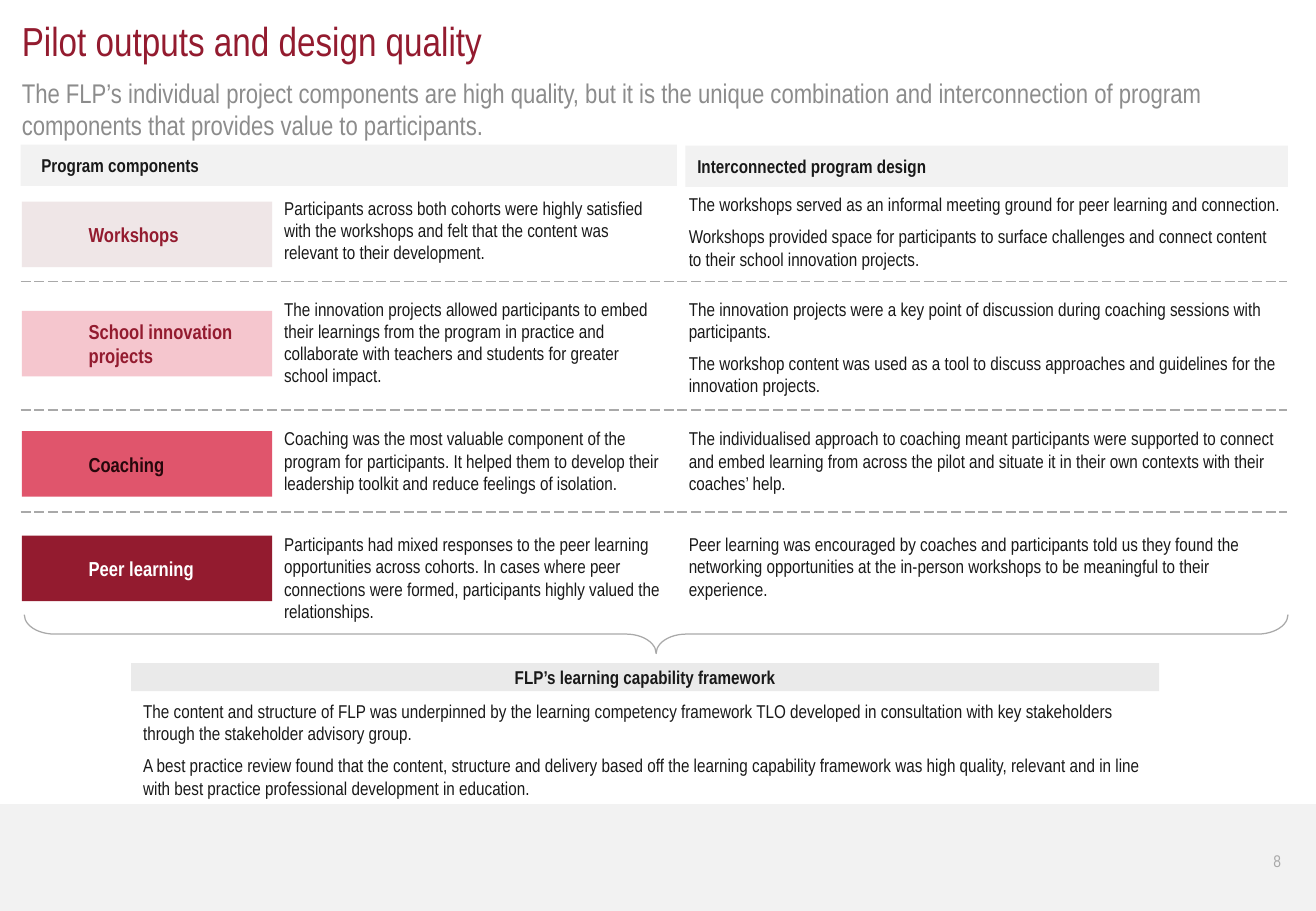
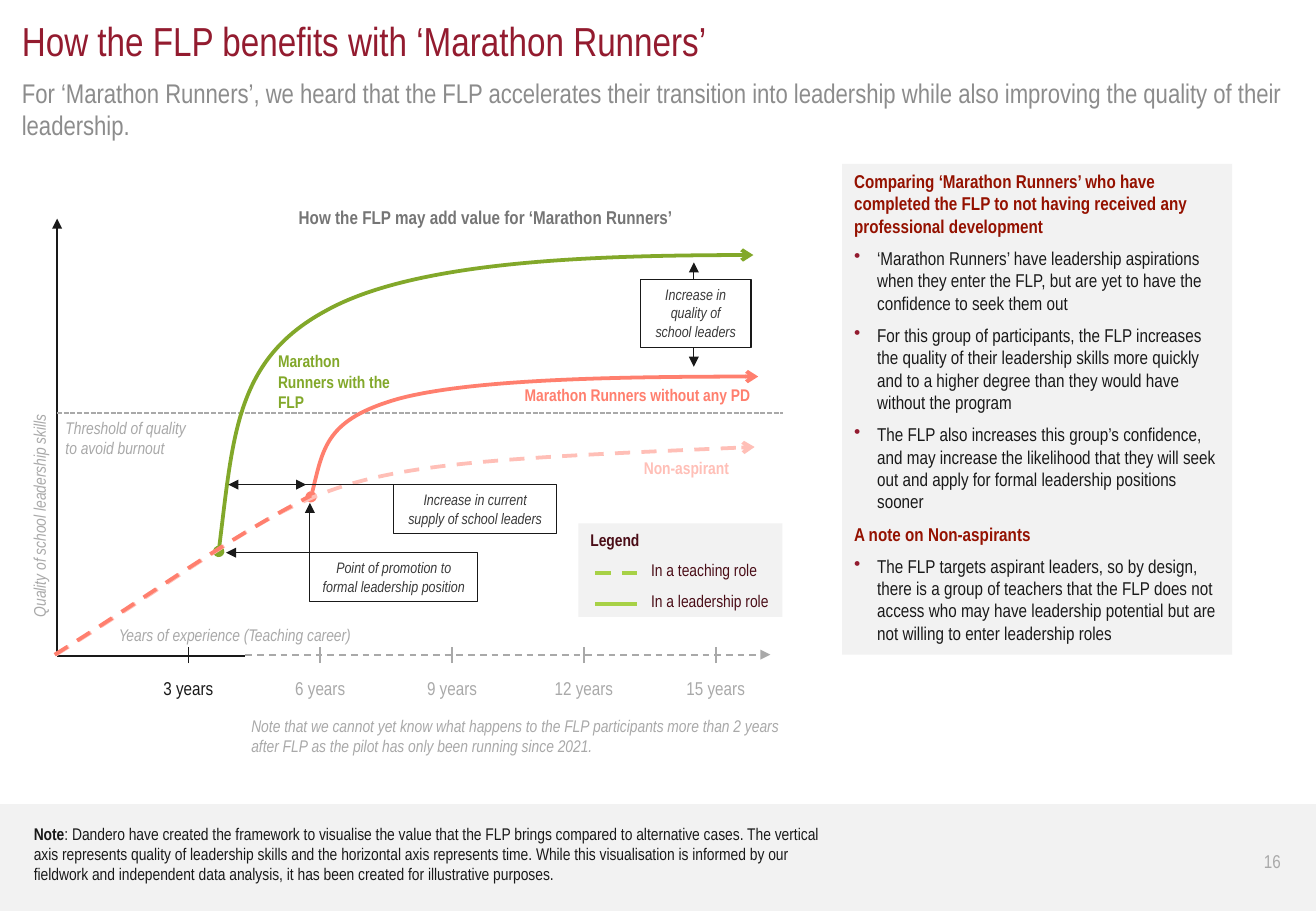
from lxml import etree
from pptx import Presentation
from pptx import util as u
from pptx.dml.color import RGBColor
from pptx.enum import dml, shapes, text
from pptx.oxml.ns import qn

CELL = u.Inches(0.1)  # grid unit: every length below is counted in cells
WIDE, HIGH = 108.3, 75
LEFT = 1.8
FACE = "Arial Narrow"

WINE = RGBColor(0x93, 0x1B, 0x2F)
GREY = RGBColor(0x8C, 0x8C, 0x8C)
MID = RGBColor(0x75, 0x75, 0x75)
PALE = RGBColor(0xA9, 0xA9, 0xA9)
BAND = RGBColor(0xF2, 0xF2, 0xF2)
BAR = RGBColor(0xEA, 0xEA, 0xEA)
INK = RGBColor(0x19, 0x19, 0x19)
SOFT = RGBColor(0x3A, 0x3A, 0x3A)
WHITE = RGBColor(0xFF, 0xFF, 0xFF)
MIST = RGBColor(0xEF, 0xE6, 0xE7)
PINK = RGBColor(0xF5, 0xC6, 0xCE)
ROSE = RGBColor(0xE0, 0x55, 0x6C)
DARK = RGBColor(0x26, 0x07, 0x0B)
PLUM = RGBColor(0x4A, 0x0D, 0x17)
BRICK = RGBColor(0x94, 0x11, 0x00)
GREEN = RGBColor(0x82, 0xA8, 0x2A)
LIME = RGBColor(0xA7, 0xD1, 0x46)
CORAL = RGBColor(0xFF, 0x7F, 0x6E)
BLUSH = RGBColor(0xFF, 0xBF, 0xB7)

DASH = dml.MSO_LINE.DASH
LONG = dml.MSO_LINE.LONG_DASH
SHORT = dml.MSO_LINE.SQUARE_DOT
TOP, MIDDLE = text.MSO_ANCHOR.TOP, text.MSO_ANCHOR.MIDDLE
START, CENTER, END = text.PP_ALIGN.LEFT, text.PP_ALIGN.CENTER, text.PP_ALIGN.RIGHT
FIT, FIXED = text.MSO_AUTO_SIZE.SHAPE_TO_FIT_TEXT, text.MSO_AUTO_SIZE.NONE

# tag, fill, ink, tag top, (text top, text), (design top, design paragraphs)
PARTS = [
    ("Workshops", MIST, WINE, 16.6,
     (15.7, "Participants across both cohorts were highly satisfied with the workshops and felt that the content was relevant to their development."),
     (15.4, ["The workshops served as an informal meeting ground for peer learning and connection.",
             "Workshops provided space for participants to surface challenges and connect content to their school innovation projects."])),
    ("School innovation projects", PINK, WINE, 25.6,
     (24, "The innovation projects allowed participants to embed their learnings from the program in practice and collaborate with teachers and students for greater school impact."),
     (24, ["The innovation projects were a key point of discussion during coaching sessions with participants.",
           "The workshop content was used as a tool to discuss approaches and guidelines for the innovation projects."])),
    ("Coaching", ROSE, DARK, 35.5,
     (34.7, "Coaching was the most valuable component of the program for participants. It helped them to develop their leadership toolkit and reduce feelings of isolation."),
     (34.7, ["The individualised approach to coaching meant participants were supported to connect and embed learning from across the pilot and situate it in their own contexts with their coaches’ help."])),
    ("Peer learning", WINE, WHITE, 44.1,
     (43.4, "Participants had mixed responses to the peer learning opportunities across cohorts. In cases where peer connections were formed, participants highly valued the relationships."),
     (43.4, ["Peer learning was encouraged by coaches and participants told us they found the networking opportunities at the in-person workshops to be meaningful to their experience."])),
]

FRAMEWORK = [
    "The content and structure of FLP was underpinned by the learning competency framework TLO developed in consultation with key stakeholders through the stakeholder advisory group.",
    "A best practice review found that the content, structure and delivery based off the learning capability framework was high quality, relevant and in line with best practice professional development in education.",
]

# heading, bullets
PANEL = [
    ("Comparing ‘Marathon Runners’ who have completed the FLP to not having received any professional development",
     ["‘Marathon Runners’ have leadership aspirations when they enter the FLP, but are yet to have the confidence to seek them out",
      "For this group of participants, the FLP increases the quality of their leadership skills more quickly and to a higher degree than they would have without the program",
      "The FLP also increases this group’s confidence, and may increase the likelihood that they will seek out and apply for formal leadership positions sooner"]),
    ("A note on Non-aspirants",
     ["The FLP targets aspirant leaders, so by design, there is a group of teachers that the FLP does not access who may have leadership potential but are not willing to enter leadership roles"]),
]

NOTE = ": Dandero have created the framework to visualise the value that the FLP brings compared to alternative cases. The vertical axis represents quality of leadership skills and the horizontal axis represents time. While this visualisation is informed by our fieldwork and independent data analysis, it has been created for illustrative purposes."


def grid(*cells):
    return [round(c * CELL) for c in cells]


def say(para, words, size, color, bold=False, italic=False):
    """Add one run."""
    run = para.add_run()
    run.text = words
    font = run.font
    font.name, font.size, font.bold, font.italic = FACE, u.Pt(size), bold, italic
    font.color.rgb = color


def start(shape, anchor=TOP, fit=FIT, wrap=True, inset=(1, 0.5, 1, 0.5)):
    """Set up the text frame of a shape and return it."""
    frame = shape.text_frame
    frame.word_wrap, frame.auto_size, frame.vertical_anchor = wrap, fit, anchor
    (frame.margin_left, frame.margin_top,
     frame.margin_right, frame.margin_bottom) = grid(*inset)
    return frame


def add_para(frame, align=START, after=6):
    """Use the first paragraph while it is empty, then add more."""
    para = frame.paragraphs[0]
    if para.runs:
        para = frame.add_paragraph()
    para.alignment, para.space_after = align, u.Pt(after)
    return para


def write(shape, words, size, color, bold=False, italic=False,
          align=START, after=6, **setup):
    frame = start(shape, **setup)
    for line in [words] if isinstance(words, str) else words:
        say(add_para(frame, align, after), line, size, color, bold, italic)


def label(slide, box, words, size, color, **style):
    shape = slide.shapes.add_textbox(*grid(*box))
    write(shape, words, size, color, **style)
    return shape


def block(slide, box, fill=None, edge=None, kind=shapes.MSO_SHAPE.RECTANGLE):
    shape = slide.shapes.add_shape(kind, *grid(*box))
    shape.shadow.inherit = False
    if fill is None:
        shape.fill.background()
    else:
        shape.fill.solid()
        shape.fill.fore_color.rgb = fill
    if edge is None:
        shape.line.fill.background()
    else:
        stroke(shape.line, edge, 0.75)
    return shape


def stroke(line, color, width, dash=None, head=None, tail=None):
    line.color.rgb, line.width = color, u.Pt(width)
    if dash is not None:
        line.dash_style = dash
    for tag, tip in (("a:headEnd", head), ("a:tailEnd", tail)):
        if tip:
            etree.SubElement(line._get_or_add_ln(), qn(tag), type=tip)


def rule(slide, x1, y1, x2, y2, color, width=0.75, **style):
    line = slide.shapes.add_connector(
        shapes.MSO_CONNECTOR.STRAIGHT, *grid(x1, y1, x2, y2))
    stroke(line.line, color, width, **style)
    etree.SubElement(line._element.spPr, qn("a:effectLst"))


def curve(slide, points, color, **style):
    """Draw a Bezier path: a start point, then three points for each arc."""
    first, *rest = [grid(*p) for p in points]
    pen = slide.shapes.build_freeform(*first)
    pen.add_line_segments(rest, close=False)
    shape = pen.convert_to_shape()
    shape.shadow.inherit = False
    shape.fill.background()
    stroke(shape.line, color, 2.25, **style)
    sides = list(shape._element.iter(qn("a:lnTo")))
    for i in range(0, len(sides), 3):
        arc = etree.Element(qn("a:cubicBezTo"))
        sides[i].addprevious(arc)
        for side in sides[i:i + 3]:
            arc.append(side[0])
            side.getparent().remove(side)


def bullet(para):
    props = para._p.get_or_add_pPr()
    props.set("marL", str(grid(1.9)[0]))
    props.set("indent", str(grid(-1.9)[0]))
    tint = etree.SubElement(props, qn("a:buClr"))
    etree.SubElement(tint, qn("a:srgbClr"), val=str(WINE))
    etree.SubElement(props, qn("a:buChar"), char="•")


def add_page(deck, title, lead, number, size):
    slide = deck.slides.add_slide(deck.slide_layouts[5])
    head = slide.shapes.title
    head.left, head.top, head.width, head.height = grid(LEFT, 1.3, 104.7, 4)
    flat = (0, 0, 0, 0)
    write(head, title, 24, WINE, after=0, inset=flat)
    label(slide, (LEFT, 6.3, 104.7, 5.4), lead, 16, GREY, inset=flat)
    label(slide, (102.7, 68.9, 3.7, 4), number, size, PALE,
          align=END, after=0, anchor=MIDDLE, fit=FIXED)
    return slide


def add_band(deck, slide):
    """Draw the footer band and move it to the shared layout."""
    band = block(slide, (0, 66.2, WIDE, HIGH - 66.2), BAND)
    deck.slide_layouts[5].shapes.element.insert(2, band._element)


def add_parts(slide):
    heads = [((1.7, 11.9, 54, 3.4), "Program components", 1.7),
             ((56.4, 12, 49.6, 3.4), "Interconnected program design", 1)]
    for box, words, pad in heads:
        write(block(slide, box, BAND), words, 11, INK, bold=True, after=0,
              anchor=MIDDLE, fit=FIXED, inset=(pad, 0, 1, 0))
    for tag, fill, ink, top, (y, words), (y2, design) in PARTS:
        write(block(slide, (LEFT, top, 20.6, 5.4), fill), tag, 12, ink,
              bold=True, after=0, anchor=MIDDLE, fit=FIXED,
              inset=(5.5, 0.5, 1, 0.5))
        label(slide, (22.4, y, 33.4, 6.6), words, 11, INK)
        label(slide, (55.7, y2, 50.7, 6.6), design, 11, INK)
    for y in (23.2, 33.75, 42.15):
        rule(slide, 1.7, y, 105.9, y, PALE, dash=LONG)
    brace = block(slide, (52.4, 0.2, 3.2, 104), edge=PALE,
                  kind=shapes.MSO_SHAPE.LEFT_BRACE)
    brace.rotation = 270
    brace.adjustments[0] = 0.78
    write(block(slide, (10.8, 54.6, 84.6, 2.3), BAR),
          "FLP’s learning capability framework", 11, INK, bold=True,
          align=CENTER, after=0, anchor=MIDDLE, fit=FIXED)
    label(slide, (10.8, 57.1, 84.6, 9.3), FRAMEWORK, 11, INK)


def add_axes(slide):
    rule(slide, 4.7, 53.7, 4.7, 18, INK, 1, tail="triangle")
    rule(slide, 4.7, 54, 20.2, 54, INK, 1)
    rule(slide, 20.2, 53.9, 63.4, 53.9, PALE, 1, dash=DASH, tail="triangle")
    rule(slide, 4.7, 34, 64.4, 34, PALE, 1, dash=SHORT)
    for i in range(5):
        x, tint = 15.5 + 10.85 * i, PALE if i else INK
        rule(slide, x, 54.6, x, 53.3, tint, 1)
        label(slide, (x - 3.45, 55.2, 6.9, 2.9), f"{3 * i + 3} years", 11,
              tint, align=CENTER)
    label(slide, (23.6, 16.5, 32.9, 2.9),
          "How the FLP may add value for ‘Marathon Runners’", 11, MID,
          bold=True, wrap=False)
    side = label(slide, (-6.2, 41, 18.9, 2.7),
                 "Quality of school leadership skills", 10, PALE,
                 italic=True, wrap=False)
    side.rotation = 270
    asides = [
        ((8.8, 50.9, 26, 2.7), "Years of experience (Teaching career)"),
        ((4.4, 33.9, 11.9, 4.4), "Threshold of quality to avoid burnout"),
        ((19.7, 58.4, 46, 4.4), "Note that we cannot yet know what happens to the FLP participants more than 2 years after FLP as the pilot has only been running since 2021."),
    ]
    for box, words in asides:
        label(slide, box, words, 10, PALE, italic=True, after=0)


def add_curves(slide):
    curve(slide, [(25.6, 40.9), (26.6, 37), (26.8, 34.5), (32.9, 32.8),
                  (39, 31.2), (51.8, 31), (62.4, 31)],
          CORAL, head="oval", tail="arrow")
    curve(slide, [(18, 45.4), (19.2, 36), (19.4, 29.6), (26.8, 25.6),
                  (34.1, 21.5), (49.4, 21), (62, 21)],
          GREEN, head="oval", tail="arrow")
    curve(slide, [(4.6, 53.9), (29.1, 38.6), (22.4, 38.5), (62.1, 36.8)],
          BLUSH, dash=DASH, tail="arrow")
    curve(slide, [(4.5, 53.9), (11.6, 49.5), (18.4, 44.5), (25.6, 40.8)],
          CORAL, dash=DASH)
    names = [
        ((21.9, 28.4, 11.3, 6.1), "Marathon Runners with the FLP", GREEN),
        ((42.2, 31.2, 21.4, 2.7), "Marathon Runners without any PD", CORAL),
        ((52, 37.2, 13.5, 2.7), "Non-aspirant", BLUSH),
    ]
    for box, words, tint in names:
        label(slide, box, words, 10, tint, bold=True)


def add_calls(slide):
    tip = "triangle"
    rule(slide, 57.1, 21.6, 57.1, 30.2, INK, head=tip, tail=tip)
    rule(slide, 25.2, 39.9, 18.8, 39.9, INK, head=tip, tail=tip)
    rule(slide, 32.4, 39.9, 23.2, 39.9, INK)
    rule(slide, 25.6, 45.5, 18.6, 45.5, INK, tail=tip)
    rule(slide, 25.5, 48.4, 25.5, 41.4, INK, tail=tip)
    calls = [
        ((25.5, 45.5, 13.8, 4), None, "Point of promotion to formal leadership position"),
        ((52.7, 23, 9.1, 5.6), WHITE, "Increase in quality of school leaders"),
        ((32.4, 39.9, 13.4, 4), None, "Increase in current supply of school leaders"),
    ]
    for box, fill, words in calls:
        write(block(slide, box, fill, INK), words, 9, SOFT, italic=True,
              align=CENTER)


def add_legend(slide):
    frame = start(block(slide, (47.6, 43.1, 16.8, 7.7), BAND))
    say(add_para(frame), "Legend", 10, PLUM, bold=True)
    for y, dash, words in ((47.2, DASH, "In a teaching role"),
                           (49.7, None, "In a leadership role")):
        para = add_para(frame)
        para._p.get_or_add_pPr().set("marL", str(grid(5)[0]))
        say(para, words, 10, PLUM)
        rule(slide, 49, y, 52.4, y, LIME, 2.25, dash=dash)


def add_panel(slide):
    frame = start(block(slide, (69.3, 13.5, 32.1, 40.4), BAND))
    for head, points in PANEL:
        say(add_para(frame), head, 11, BRICK, bold=True)
        for point in points:
            para = add_para(frame)
            bullet(para)
            say(para, point, 11, INK)


def add_note(slide):
    box = slide.shapes.add_textbox(*grid(LEFT, 67.3, 66.7, 6.1))
    para = add_para(start(box))
    say(para, "Note", 10, INK, bold=True)
    say(para, NOTE, 10, INK)


def main():
    deck = Presentation()
    deck.slide_width, deck.slide_height = grid(WIDE, HIGH)
    design = add_page(
        deck, "Pilot outputs and design quality",
        "The FLP’s individual project components are high quality, but it is the unique combination and interconnection of program components that provides value to participants.",
        "8", 10)
    add_band(deck, design)
    add_parts(design)
    runners = add_page(
        deck, "How the FLP benefits with ‘Marathon Runners’",
        "For ‘Marathon Runners’, we heard that the FLP accelerates their transition into leadership while also improving the quality of their leadership.",
        "16", 11)
    for draw in (add_axes, add_curves, add_calls, add_legend, add_panel, add_note):
        draw(runners)
    deck.save("out.pptx")


if __name__ == "__main__":
    main()
